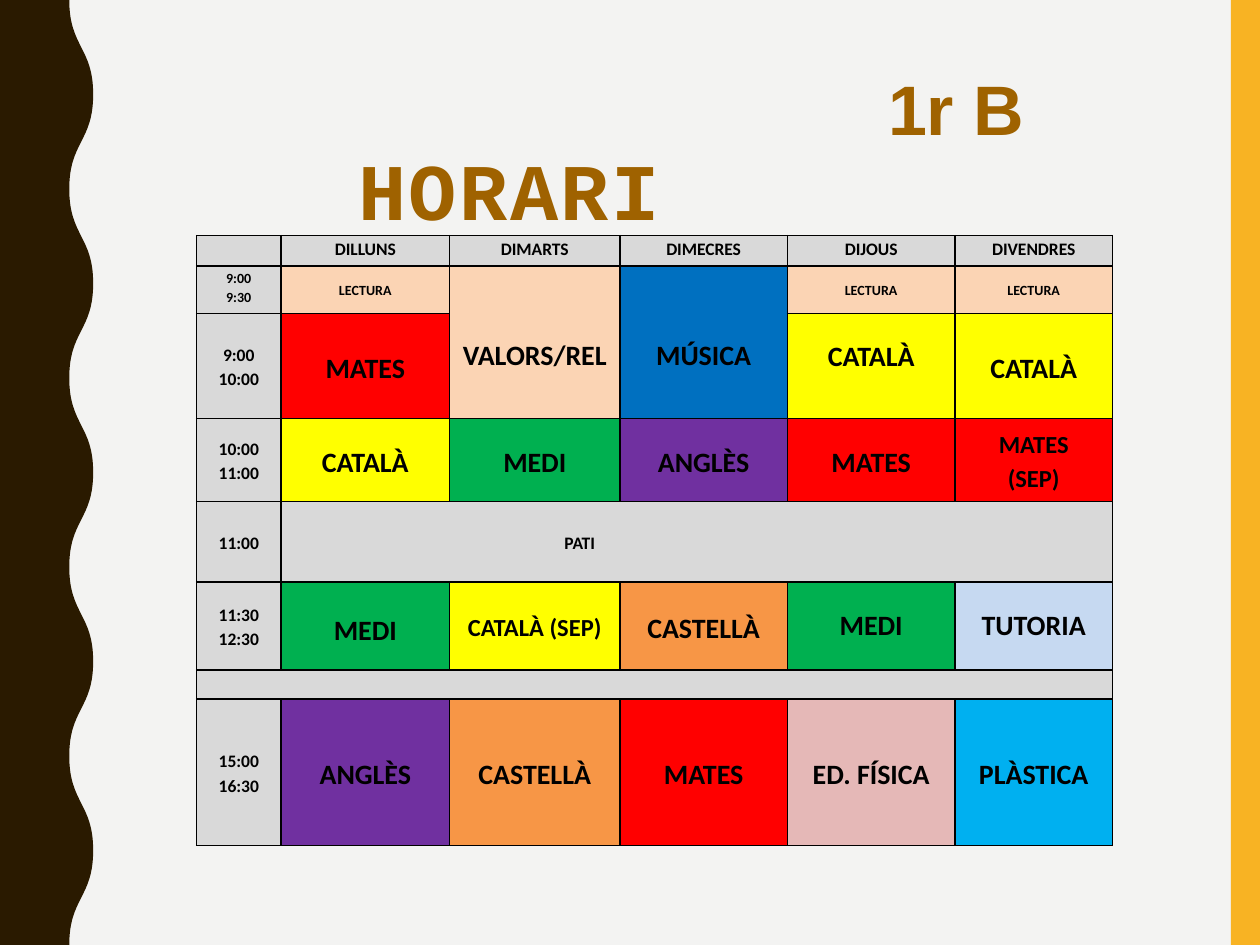
from lxml import etree
from pptx import Presentation
from pptx.dml.color import RGBColor
from pptx.enum.shapes import MSO_SHAPE
from pptx.enum.text import MSO_ANCHOR, MSO_AUTO_SIZE, PP_ALIGN
from pptx.oxml.ns import qn
from pptx.util import Inches, Pt

COLORS = {
    "background": "F3F3F2", "wave": "2A1A00", "stripe": "F8B323", "heading": "9F6200",
    "black": "000000", "grey": "D9D9D9", "peach": "FBD4B4", "blue": "0070C0",
    "red": "FF0000", "yellow": "FFFF00", "green": "00B050", "purple": "7030A0",
    "orange": "F79646", "lavender": "C6D9F1", "pink": "E5B8B7", "sky": "00B0F0",
}
SUBJECT_COLORS = {
    "LECTURA": "peach", "VALORS/REL": "peach", "MÚSICA": "blue", "MATES": "red",
    "MATES\n(SEP)": "red", "CATALÀ": "yellow", "CATALÀ (SEP)": "yellow",
    "MEDI": "green", "ANGLÈS": "purple", "CASTELLÀ": "orange",
    "TUTORIA": "lavender", "ED. FÍSICA": "pink", "PLÀSTICA": "sky",
}
TIMETABLE = [
    ["", "DILLUNS", "DIMARTS", "DIMECRES", "DIJOUS", "DIVENDRES"],
    ["9:00\n9:30", "LECTURA", "VALORS/REL", "MÚSICA", "LECTURA", "LECTURA"],
    ["9:00\n10:00", "MATES", "", "", "CATALÀ", "CATALÀ"],
    ["10:00\n11:00", "CATALÀ", "MEDI", "ANGLÈS", "MATES", "MATES\n(SEP)"],
    ["11:00", "PATI", "", "", "", ""],
    ["11:30\n12:30", "MEDI", "CATALÀ (SEP)", "CASTELLÀ", "MEDI", "TUTORIA"],
    ["", "", "", "", "", ""],
    ["15:00\n16:30", "ANGLÈS", "CASTELLÀ", "MATES", "ED. FÍSICA", "PLÀSTICA"],
]
COLUMN_WIDTHS = [0.67, 1.34, 1.35, 1.33, 1.33, 1.25]
ROW_HEIGHTS = [0.24, 0.38, 0.83, 0.66, 0.64, 0.7, 0.23, 1.16]
MERGES = [((1, 2), (2, 2)), ((1, 3), (2, 3)), ((4, 1), (4, 5)), ((6, 0), (6, 5))]
TOP_ANCHORED = {(1, 0), (2, 4), (5, 4), (5, 5)}
TOP_MARGINS = {(1, 0): 0.01, (1, 2): 0.18, (1, 3): 0.18, (2, 4): 0.17,
               (5, 1): 0.04, (5, 4): 0.17, (5, 5): 0.17}
BORDER_SIDES = ["a:lnL", "a:lnR", "a:lnT", "a:lnB"]
WAVE_INNER, WAVE_OUTER, WAVE_STEP, WAVE_COUNT = 0.55, 0.74, 0.75, 10


def rgb(name):
    return RGBColor.from_string(COLORS[name])


def paint(shape, color):
    shape.fill.solid()
    shape.fill.fore_color.rgb = rgb(color)
    shape.line.fill.background()
    shape.shadow.inherit = False


def set_font(paragraph, name, size, color):
    font = paragraph.font
    font.name, font.size, font.bold = name, Pt(size), True
    font.color.rgb = rgb(color)


def add_wave(shapes):
    points = []
    for index in range(WAVE_COUNT):
        start, end = (WAVE_INNER, WAVE_OUTER) if index % 2 == 0 else (WAVE_OUTER, WAVE_INNER)
        for x, offset in ((start, 0.5), (end, 0.5), (end, 1)):
            points.append((Inches(x), Inches((index + offset) * WAVE_STEP)))
    builder = shapes.build_freeform(Inches(WAVE_INNER), 0)
    builder.add_line_segments([*points, (0, Inches(7.5)), (0, 0)], close=True)
    wave = builder.convert_to_shape()
    segments = list(wave._element.iter(qn("a:lnTo")))
    for first in range(0, len(points), 3):
        curve = etree.Element(qn("a:cubicBezTo"))
        segments[first].addprevious(curve)
        for segment in segments[first:first + 3]:
            curve.append(segment[0])
            segment.getparent().remove(segment)
    paint(wave, "wave")


def add_borders(cell):
    properties = cell._tc.get_or_add_tcPr()
    for position, side in enumerate(BORDER_SIDES):
        line = etree.Element(qn(side), w=str(Pt(1)))
        fill = etree.SubElement(line, qn("a:solidFill"))
        etree.SubElement(fill, qn("a:srgbClr"), val=COLORS["black"])
        properties.insert(position, line)


def text_size(row, column, text):
    if "(SEP)" in text:
        return 14
    if row == 1 and (column == 0 or text == "LECTURA"):
        return 8
    return 16 if text in SUBJECT_COLORS else 10


def fill_cell(cell, row, column, text):
    cell.fill.solid()
    cell.fill.fore_color.rgb = rgb(SUBJECT_COLORS.get(text, "grey"))
    add_borders(cell)
    top = row == 0 or (row, column) in TOP_ANCHORED
    cell.vertical_anchor = MSO_ANCHOR.TOP if top else MSO_ANCHOR.MIDDLE
    cell.margin_left = Inches(2.25 if text == "PATI" else 0.07)
    cell.margin_right = Inches(0.07)
    cell.margin_top = Inches(TOP_MARGINS.get((row, column), 0))
    cell.margin_bottom = 0
    cell.text_frame.text = text
    for paragraph in cell.text_frame.paragraphs:
        paragraph.alignment = PP_ALIGN.LEFT if text == "PATI" else PP_ALIGN.CENTER
        paragraph.line_spacing = 1.15
        set_font(paragraph, "Calibri", text_size(row, column, text), "black")
        if not text:
            etree.SubElement(paragraph._p, qn("a:endParaRPr"), sz="800")


presentation = Presentation()
presentation.slide_width, presentation.slide_height = Inches(10), Inches(7.5)
slide = presentation.slides.add_slide(presentation.slide_layouts[5])
slide.background.fill.solid()
slide.background.fill.fore_color.rgb = rgb("background")

stripe = slide.shapes.add_shape(
    MSO_SHAPE.RECTANGLE, Inches(9.77), 0, Inches(0.23), Inches(7.5))
paint(stripe, "stripe")
add_wave(slide.shapes)

title = slide.shapes.title
title.left, title.top, title.width, title.height = map(Inches, (2.19, 0.47, 4.05, 1.07))
frame = title.text_frame
frame.auto_size = MSO_AUTO_SIZE.NONE
frame.vertical_anchor = MSO_ANCHOR.TOP
frame.margin_top, frame.margin_bottom = Inches(0.73), 0
frame.margin_left, frame.margin_right = Inches(0.1), Inches(0.45)
frame.text = "HORARI"
heading = frame.paragraphs[0]
heading.alignment, heading.line_spacing = PP_ALIGN.CENTER, 0.9
set_font(heading, "Courier New", 45.9, "heading")
heading.runs[0].font._element.set("spc", "150")

table = slide.shapes.add_table(
    len(ROW_HEIGHTS), len(COLUMN_WIDTHS), Inches(1.56), Inches(1.87),
    Inches(sum(COLUMN_WIDTHS)), Inches(sum(ROW_HEIGHTS))).table
for column, width in zip(table.columns, COLUMN_WIDTHS):
    column.width = Inches(width)
for row, height in zip(table.rows, ROW_HEIGHTS):
    row.height = Inches(height)
for row_index, texts in enumerate(TIMETABLE):
    for column_index, text in enumerate(texts):
        fill_cell(table.cell(row_index, column_index), row_index, column_index, text)
for first, last in MERGES:
    table.cell(*first).merge(table.cell(*last))

group_label = slide.shapes.add_textbox(Inches(6.95), Inches(0.47), Inches(2.03), Inches(0.77))
group_label.text_frame.word_wrap = True
group_label.text_frame.text = "1r B"
set_font(group_label.text_frame.paragraphs[0], "Arial", 40, "heading")

presentation.save("out.pptx")
